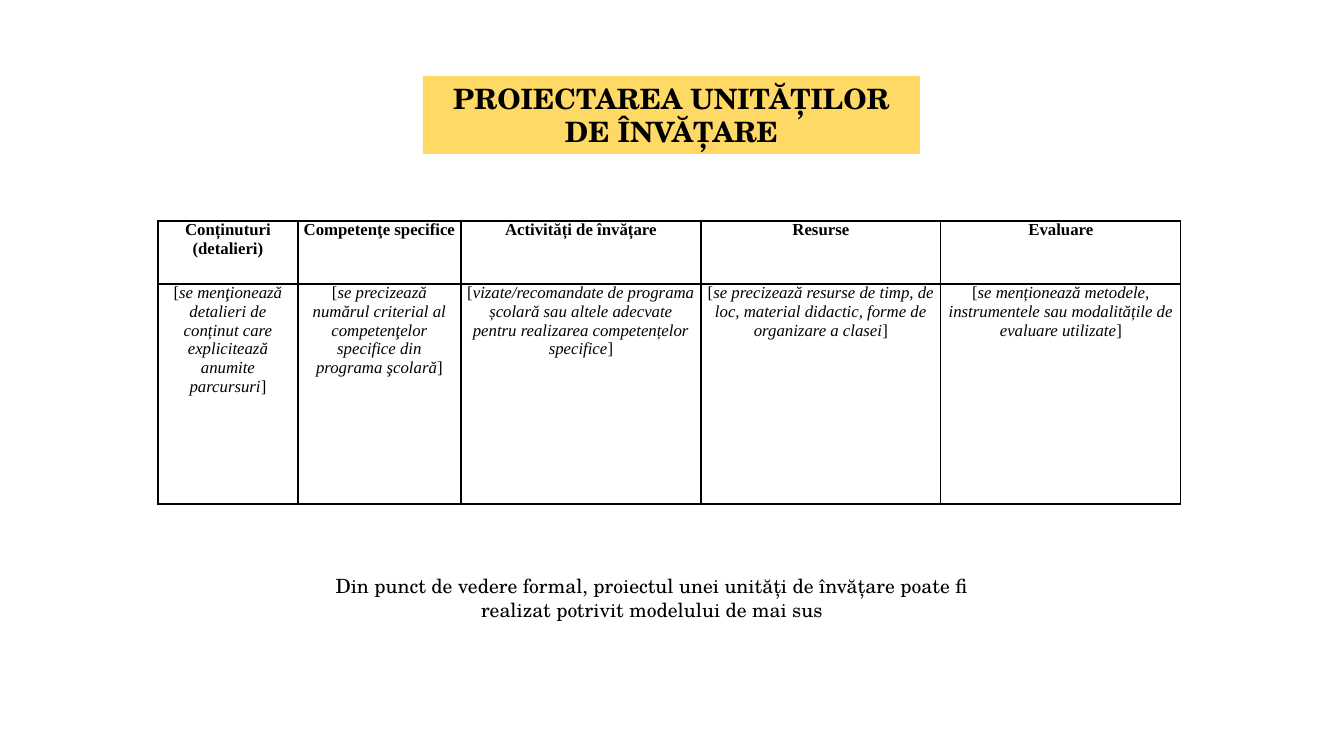
from lxml import etree
from pptx import Presentation
from pptx.dml.color import RGBColor
from pptx.enum.text import MSO_ANCHOR, MSO_AUTO_SIZE, PP_ALIGN
from pptx.oxml.ns import qn
from pptx.util import Pt

CENTER = PP_ALIGN.CENTER
TOP, MIDDLE = MSO_ANCHOR.TOP, MSO_ANCHOR.MIDDLE
NO_AUTOSIZE = MSO_AUTO_SIZE.NONE
EMU_PER_PX = 914400 / 100.8
SERIF, SCHOLA = "Times New Roman", "TeX Gyre Schola"
BLACK, YELLOW = "000000", "FFD966"

COLUMNS = [
    (140, ["Conținuturi", "(detalieri)"],
     "se menţionează detalieri de conținut care explicitează anumite parcursuri"),
    (163, ["Competenţe specifice"],
     "se precizează numărul criterial al competenţelor specifice din programa şcolară"),
    (240, ["Activități de învățare"],
     "vizate/recomandate de programa școlară sau altele adecvate pentru realizarea "
     "competențelor specifice"),
    (240, ["Resurse"],
     "se precizează resurse de timp, de loc, material didactic, forme de organizare a clasei"),
    (240, ["Evaluare"],
     "se menționează metodele, instrumentele sau modalitățile de evaluare utilizate"),
]
ROW_HEIGHTS = [63, 220]


def px(n):
    return round(n * EMU_PER_PX)


def rgb(value):
    return RGBColor.from_string(value)


def add_run(p, text, size, font, bold=False, italic=False):
    r = p.add_run()
    r.text = text
    r.font.size = Pt(size)
    r.font.name = font
    r.font.bold = bold
    r.font.italic = italic
    r.font.color.rgb = rgb(BLACK)


def write_paragraph(sp, text, size, bold=False):
    tf = sp.text_frame
    tf.word_wrap = True
    tf.auto_size = NO_AUTOSIZE
    p = tf.paragraphs[0]
    p.alignment = CENTER
    add_run(p, text, size, SCHOLA, bold)
    return tf


def add_title(s, text, x, y, w, h):
    sp = s.shapes.title
    sp.left, sp.top, sp.width, sp.height = map(px, (x, y, w, h))
    sp.fill.solid()
    sp.fill.fore_color.rgb = rgb(YELLOW)
    write_paragraph(sp, text, 20, bold=True).vertical_anchor = MIDDLE


def add_note(s, text, x, y, w, h):
    sp = s.shapes.add_textbox(*map(px, (x, y, w, h)))
    write_paragraph(sp, text, 14).vertical_anchor = TOP


def add_borders(cell):
    tc_pr = cell._tc.get_or_add_tcPr()
    for side in ("a:lnL", "a:lnR", "a:lnT", "a:lnB"):
        ln = etree.SubElement(tc_pr, qn(side), w=str(Pt(1)))
        fill = etree.SubElement(ln, qn("a:solidFill"))
        etree.SubElement(fill, qn("a:srgbClr"), val=BLACK)


def format_cell(cell):
    add_borders(cell)
    cell.fill.background()
    cell.margin_left = cell.margin_right = px(5)
    cell.margin_top = cell.margin_bottom = 0
    cell.vertical_anchor = TOP


def write_header(cell, lines):
    tf = cell.text_frame
    for i, line in enumerate(lines):
        p = tf.add_paragraph() if i else tf.paragraphs[0]
        p.alignment = CENTER
        add_run(p, line, 12, SERIF, bold=True)


def write_hint(cell, text):
    p = cell.text_frame.paragraphs[0]
    p.alignment = CENTER
    add_run(p, "[", 12, SERIF)
    add_run(p, text, 12, SERIF, italic=True)
    add_run(p, "]", 12, SERIF)


def add_plan_table(s, x, y):
    width = sum(column[0] for column in COLUMNS)
    frame = s.shapes.add_table(len(ROW_HEIGHTS), len(COLUMNS),
                               *map(px, (x, y, width, sum(ROW_HEIGHTS))))
    table = frame.table
    for row, height in zip(table.rows, ROW_HEIGHTS):
        row.height = px(height)
    for i, (col_width, header, hint) in enumerate(COLUMNS):
        table.columns[i].width = px(col_width)
        write_header(table.cell(0, i), header)
        write_hint(table.cell(1, i), hint)
    for cell in table.iter_cells():
        format_cell(cell)


def main():
    prs = Presentation()
    prs.slide_width, prs.slide_height = px(1344), px(756)
    s = prs.slides.add_slide(prs.slide_layouts[5])
    add_plan_table(s, 158, 221)
    add_note(s, "Din punct de vedere formal, proiectul unei unități de învățare poate fi "
                "realizat potrivit modelului de mai sus", 299, 569, 706, 57)
    add_title(s, "PROIECTAREA UNITĂȚILOR DE ÎNVĂȚARE", 423, 76, 497, 78)
    prs.save("out.pptx")


if __name__ == "__main__":
    main()
